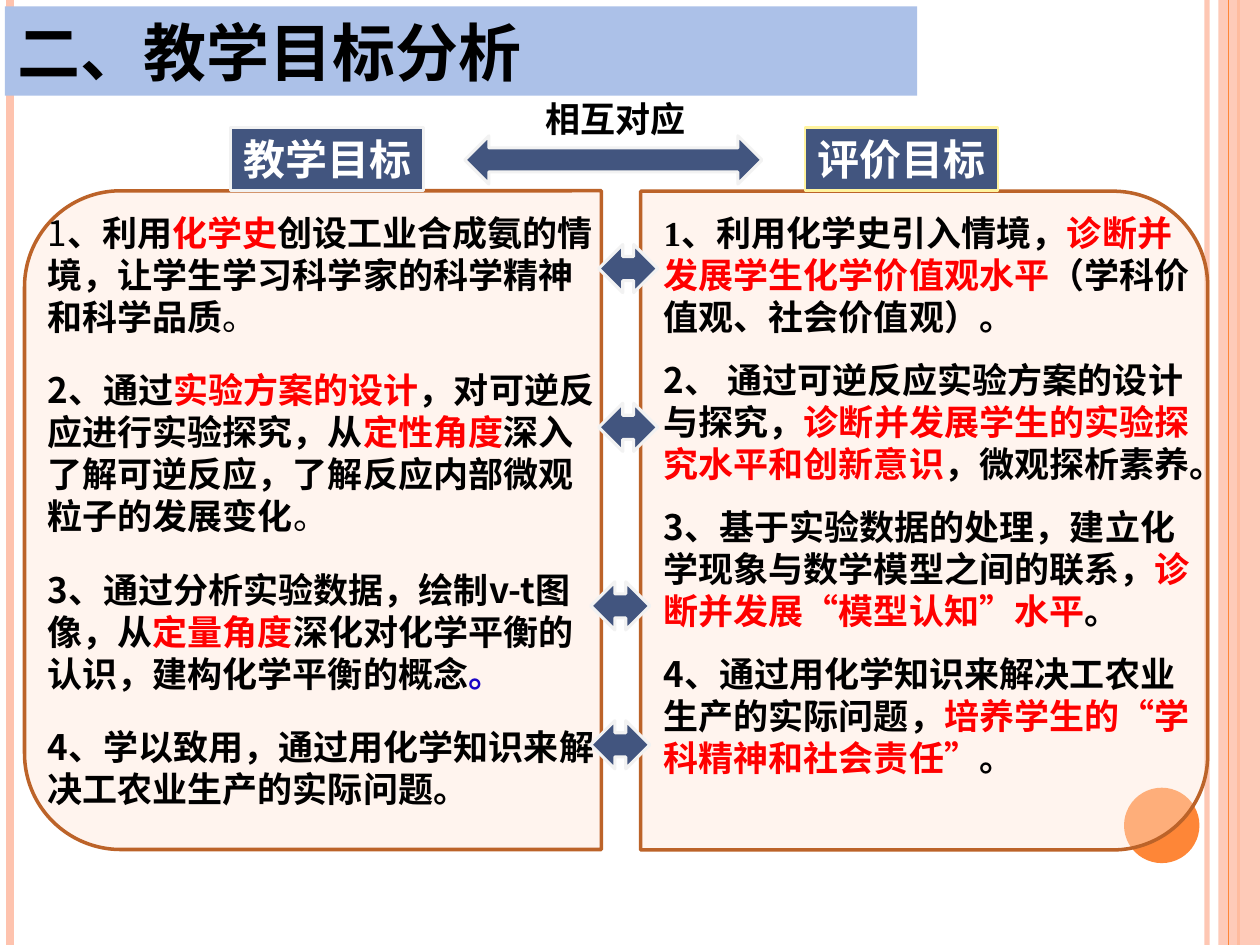
"""Build a slide that pairs teaching goals with assessment goals."""
from dataclasses import dataclass

from lxml import etree
from pptx import Presentation
from pptx.dml.color import RGBColor
from pptx.enum.shapes import MSO_CONNECTOR, MSO_SHAPE
from pptx.enum.text import MSO_ANCHOR, PP_ALIGN
from pptx.oxml.ns import qn
from pptx.util import Cm, Pt

STRAIGHT = MSO_CONNECTOR.STRAIGHT
RECTANGLE = MSO_SHAPE.RECTANGLE
OVAL = MSO_SHAPE.OVAL
PANEL = MSO_SHAPE.ROUND_2_SAME_RECTANGLE
DOUBLE_ARROW = MSO_SHAPE.LEFT_RIGHT_ARROW
TOP, MIDDLE = MSO_ANCHOR.TOP, MSO_ANCHOR.MIDDLE
LEFT, CENTER = PP_ALIGN.LEFT, PP_ALIGN.CENTER


@dataclass(frozen=True)
class Theme:
    """Colours, fonts and type sizes of the slide."""
    sans: str = "Noto Sans CJK SC"
    serif: str = "Times New Roman"
    title_size: int = 36
    heading_size: int = 24
    body_size: int = 20
    line_pitch: int = 24
    black: str = "000000"
    white: str = "FFFFFF"
    red: str = "FF0000"
    blue: str = "1A03C5"
    banner: str = "ACC1E8"
    navy: str = "42557F"
    pale: str = "F2F2F2"
    yellow: str = "FFF39D"
    peach: str = "FEC3AE"
    orange: str = "FE8637"
    cream: str = "FFE7D7"
    brown: str = "BC6329"


THEME = Theme()


@dataclass(frozen=True)
class Span:
    """A stretch of text in one style."""
    text: str
    color: str = THEME.black
    bold: bool = True
    latin: str = THEME.sans


def key(text):
    """Return a highlighted span."""
    return Span(text, THEME.red)


TEACHING_GOALS = [
    [Span("1", bold=False), Span("、利用"), key("化学史"),
     Span("创设工业合成氨的情境，让学生学习科学家的科学精神和科学品质"),
     Span("。", bold=False)],
    [Span("2、通过"), key("实验方案的设计"), Span("，对可逆反应进行实验探究，从"),
     key("定性角度"), Span("深入了解可逆反应，了解反应内部微观粒子的发展变化"),
     Span("。", bold=False)],
    [Span("3、通过分析实验数据，绘制v-t图像，从"), key("定量角度"),
     Span("深化对化学平衡的认识，建构化学平衡的概念"), Span("。", THEME.blue)],
    [Span("4、学以致用，通过用化学知识来解决工农业生产的实际问题。")],
]
ASSESSMENT_GOALS = [
    [Span("1、利用化学史引入情境，", latin=THEME.serif),
     key("诊断并发展学生化学价值观水平"), Span("（学科价值观、社会价值观）。")],
    [Span("2、 通过可逆反应实验方案的设计与探究，"),
     key("诊断并发展学生的实验探究水平和创新意识"), Span("，微观探析素养。")],
    [Span("3、基于实验数据的处理，建立化学现象与数学模型之间的联系，"),
     key("诊断并发展“模型认知”水平"), Span("。")],
    [Span("4、通过用化学知识来解决工农业生产的实际问题，"),
     key("培养学生的“学科精神和社会责任”"), Span("。")],
]


def set_alpha(fill, percent):
    """Make a solid fill partly transparent."""
    color = fill._xPr.find(qn("a:solidFill"))[0]
    etree.SubElement(color, qn("a:alpha"), val=str(percent * 1000))


def add_rail(slide, x, color, width, alpha=100):
    """Draw a vertical line over the full height."""
    rail = slide.shapes.add_connector(STRAIGHT, Cm(x), 0, Cm(x), Cm(19.05))
    rail.line.color.rgb = RGBColor.from_string(color)
    rail.line.width = Pt(width)
    if alpha < 100:
        set_alpha(rail.line.fill, alpha)
    etree.SubElement(rail._element.spPr, qn("a:effectLst"))


def add_block(slide, kind, box, color, outline=None, width=1.75, alpha=100):
    """Draw a filled preset shape."""
    block = slide.shapes.add_shape(kind, *map(Cm, box))
    block.shadow.inherit = False
    block.fill.solid()
    block.fill.fore_color.rgb = RGBColor.from_string(color)
    if alpha < 100:
        set_alpha(block.fill, alpha)
    if outline:
        block.line.color.rgb = RGBColor.from_string(outline)
        block.line.width = Pt(width)
    else:
        block.line.fill.background()
    return block


def add_span(paragraph, span, size):
    """Append one run to a paragraph."""
    run = paragraph.add_run()
    run.text = span.text
    font = run.font
    font.size, font.bold, font.name = Pt(size), span.bold, span.latin
    font.color.rgb = RGBColor.from_string(span.color)
    east_asian = etree.Element(qn("a:ea"), typeface=THEME.sans)
    font._element.find(qn("a:latin")).addnext(east_asian)


def write_label(holder, span, size, align=CENTER, wrap=False):
    """Write a single vertically centred line."""
    frame = holder.text_frame
    frame.word_wrap = wrap
    frame.vertical_anchor = MIDDLE
    frame.margin_top = frame.margin_bottom = 0
    frame.paragraphs[0].alignment = align
    add_span(frame.paragraphs[0], span, size)


def add_goals(slide, box, goals, space_before=0):
    """Add a column of numbered goals."""
    frame = slide.shapes.add_textbox(*map(Cm, box)).text_frame
    frame.word_wrap = True
    frame.vertical_anchor = TOP
    frame.margin_top = Cm(0.22)
    for index, spans in enumerate(goals):
        paragraph = frame.add_paragraph() if index else frame.paragraphs[0]
        paragraph.line_spacing = Pt(THEME.line_pitch)
        paragraph.space_before = Pt(space_before if index else 0)
        paragraph.space_after = Pt(12)
        for span in spans:
            add_span(paragraph, span, THEME.body_size)


def add_panel(slide, box, rotation):
    """Draw a goal panel with its rounded side turned outwards."""
    panel = add_block(slide, PANEL, box, THEME.cream, THEME.brown, 2, 42)
    panel.rotation = rotation


def add_heading(slide, left, text, outline):
    """Add the heading plate of a panel."""
    plate = add_block(slide, RECTANGLE, (left, 2.57, 3.89, 1.27),
                      THEME.navy, outline, 1.5)
    write_label(plate, Span(text, THEME.white), THEME.heading_size)


def add_arrow(slide, box):
    """Draw a two-way arrow."""
    add_block(slide, DOUBLE_ARROW, box, THEME.navy, THEME.pale)


def add_backdrop(slide):
    """Draw the side rails and the corner disc."""
    add_rail(slide, 24.33, THEME.peach, 3, 93)
    add_rail(slide, 0.2, THEME.peach, 4.5)
    add_rail(slide, 24.97, THEME.orange, 1.5)
    add_block(slide, RECTANGLE, (24.56, 0, 0.84, 19.05), THEME.peach, alpha=87)
    add_rail(slide, 24.77, THEME.orange, 0.75)
    add_block(slide, OVAL, (22.66, 15.88, 1.52, 1.52), THEME.orange)


def main():
    """Assemble and save the slide."""
    deck = Presentation()
    deck.slide_width, deck.slide_height = Cm(25.4), Cm(19.05)
    slide = deck.slides.add_slide(deck.slide_layouts[6])
    add_backdrop(slide)
    banner = add_block(slide, RECTANGLE, (0.1, 0.13, 18.39, 1.8), THEME.banner)
    write_label(banner, Span("二、教学目标分析"), THEME.title_size, LEFT, True)
    add_panel(slide, (-0.33, 4.67, 13.28, 11.63), 270)
    add_panel(slide, (11.99, 4.78, 13.28, 11.43), 90)
    add_goals(slide, (0.71, 4.04, 11.58, 12.45), TEACHING_GOALS, 6)
    add_heading(slide, 4.65, "教学目标", THEME.pale)
    add_heading(slide, 16.23, "评价目标", THEME.yellow)
    add_goals(slide, (13.13, 4.04, 11.2, 13.08), ASSESSMENT_GOALS)
    add_arrow(slide, (9.37, 2.74, 5.99, 0.97))
    relation = slide.shapes.add_textbox(Cm(10.74), Cm(1.83), Cm(3.35), Cm(1.12))
    write_label(relation, Span("相互对应"), THEME.body_size)
    for left, top in ((12.07, 4.93), (12.07, 8.13), (11.91, 11.73), (11.91, 14.53)):
        add_arrow(slide, (left, top, 1.19, 0.97))
    deck.save("out.pptx")


if __name__ == "__main__":
    main()
